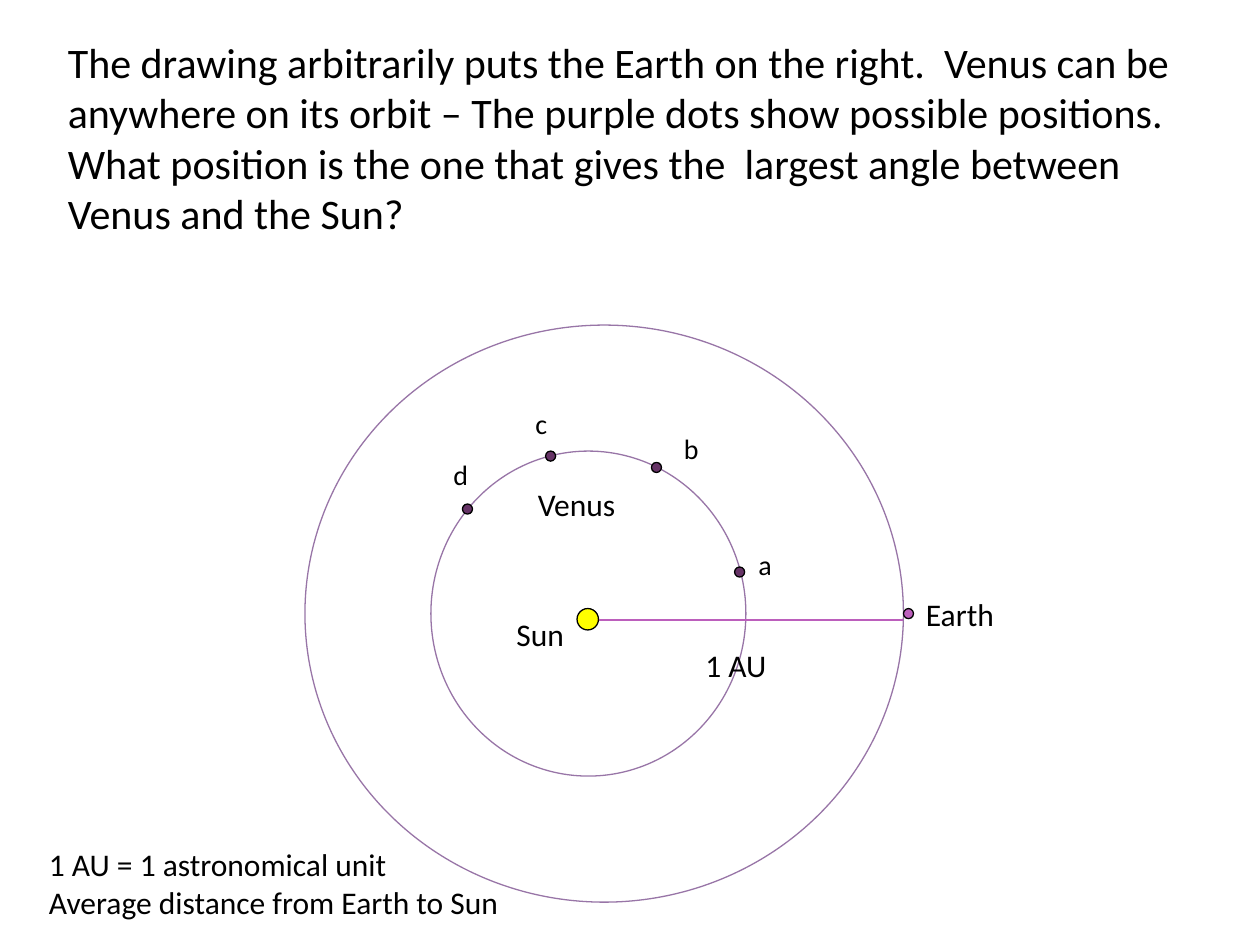
from lxml import etree
from pptx import Presentation
from pptx import util as u
from pptx.dml.color import RGBColor
from pptx.enum import shapes, text
from pptx.oxml.ns import qn

COLORS = {
    "text": "000000",
    "outline": "000000",
    "orbit": "9875A7",
    "sun": "FFFF00",
    "venus": "663366",
    "earth": "BC5FBC",
}
DOT = 0.08


class Diagram:
    font_name = "Calibri"
    line_width = u.Pt(0.75)

    def __init__(self, slide):
        self.slide = slide

    def color(self, name):
        return RGBColor.from_string(COLORS[name])

    def label(self, lines, left, top, width, height, size=18, wrap=True):
        box = self.slide.shapes.add_textbox(*map(u.Inches, (left, top, width, height)))
        frame = box.text_frame
        frame.word_wrap = wrap
        frame.auto_size = text.MSO_AUTO_SIZE.SHAPE_TO_FIT_TEXT
        for index, line in enumerate(lines):
            paragraph = frame.add_paragraph() if index else frame.paragraphs[0]
            run = paragraph.add_run()
            run.text = line
            run.font.name = self.font_name
            run.font.size = u.Pt(size)
            run.font.color.rgb = self.color("text")

    def ellipse(self, left, top, width, height, fill=None, line="outline"):
        shape = self.slide.shapes.add_shape(
            shapes.MSO_SHAPE.OVAL, *map(u.Inches, (left, top, width, height)))
        shape.shadow.inherit = False
        if fill:
            shape.fill.solid()
            shape.fill.fore_color.rgb = self.color(fill)
        else:
            shape.fill.background()
        shape.line.color.rgb = self.color(line)
        shape.line.width = self.line_width

    def planet(self, left, top, fill):
        self.ellipse(left, top, DOT, DOT, fill)

    def line(self, start, end, color):
        connector = self.slide.shapes.add_connector(
            shapes.MSO_CONNECTOR.STRAIGHT, *map(u.Inches, start + end))
        connector.line.color.rgb = self.color(color)
        connector.line.width = self.line_width
        etree.SubElement(connector._element.spPr, qn("a:effectLst"))


def main():
    presentation = Presentation()
    presentation.slide_width = u.Inches(10)
    presentation.slide_height = u.Inches(7.5)
    diagram = Diagram(presentation.slides.add_slide(presentation.slide_layouts[6]))

    question = (
        "The drawing arbitrarily puts the Earth on the right.  Venus can be anywhere "
        "on its orbit – The purple dots show possible positions.  What position is "
        "the one that gives the  largest angle between Venus and the Sun?")
    diagram.label([question], 0.44, 0.24, 9.23, 1.72, size=24)

    earth_orbit = (2.42, 2.58, 4.75, 4.58)
    venus_orbit = (3.42, 3.58, 2.5, 2.58)
    for orbit in (earth_orbit, venus_orbit):
        diagram.ellipse(*orbit, line="orbit")
    diagram.ellipse(4.58, 4.83, 0.17, 0.17, "sun")
    diagram.planet(7.17, 4.83, "earth")
    diagram.line((4.75, 4.92), (7.17, 4.92), "earth")

    for name, left, top in (("1 AU", 5.5, 5.08), ("Earth", 7.25, 4.67),
                            ("Sun", 4, 4.83), ("Venus", 4.17, 3.8)):
        diagram.label([name], left, top, 1.08, 0.4)

    venus_positions = {
        "a": ((5.83, 4.5), (5.92, 4.3)),
        "b": ((5.17, 3.67), (5.33, 3.38)),
        "c": ((4.33, 3.58), (4.15, 3.18)),
        "d": ((3.67, 4), (3.5, 3.58)),
    }
    for letter, (dot, corner) in venus_positions.items():
        diagram.planet(*dot, "venus")
        diagram.label([letter], *corner, 0.38, 0.37, size=16)

    diagram.label(["1 AU = 1 astronomical unit", "Average distance from Earth to Sun"],
                  0.29, 6.66, 3.83, 0.71, wrap=False)
    presentation.save("out.pptx")


if __name__ == "__main__":
    main()
